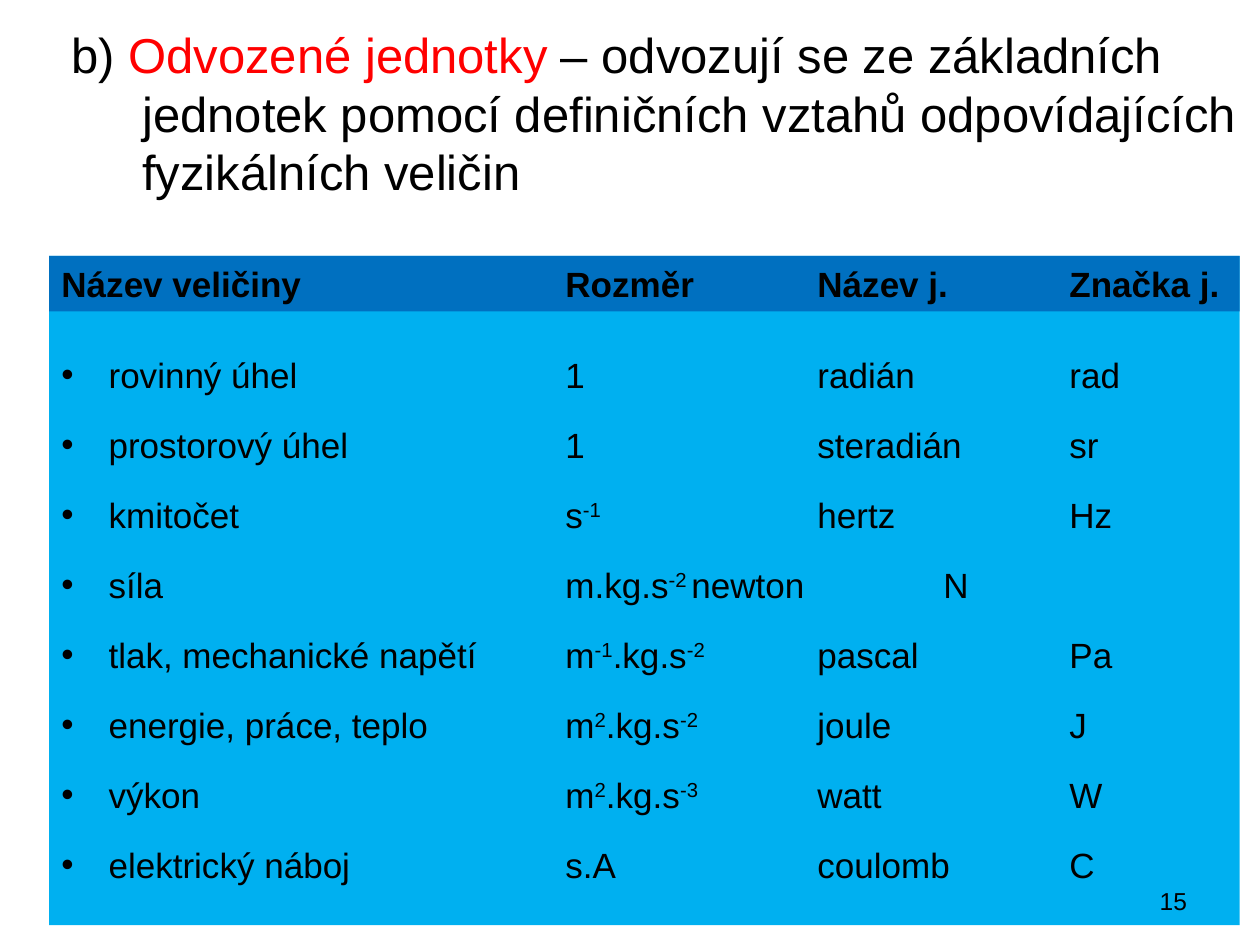
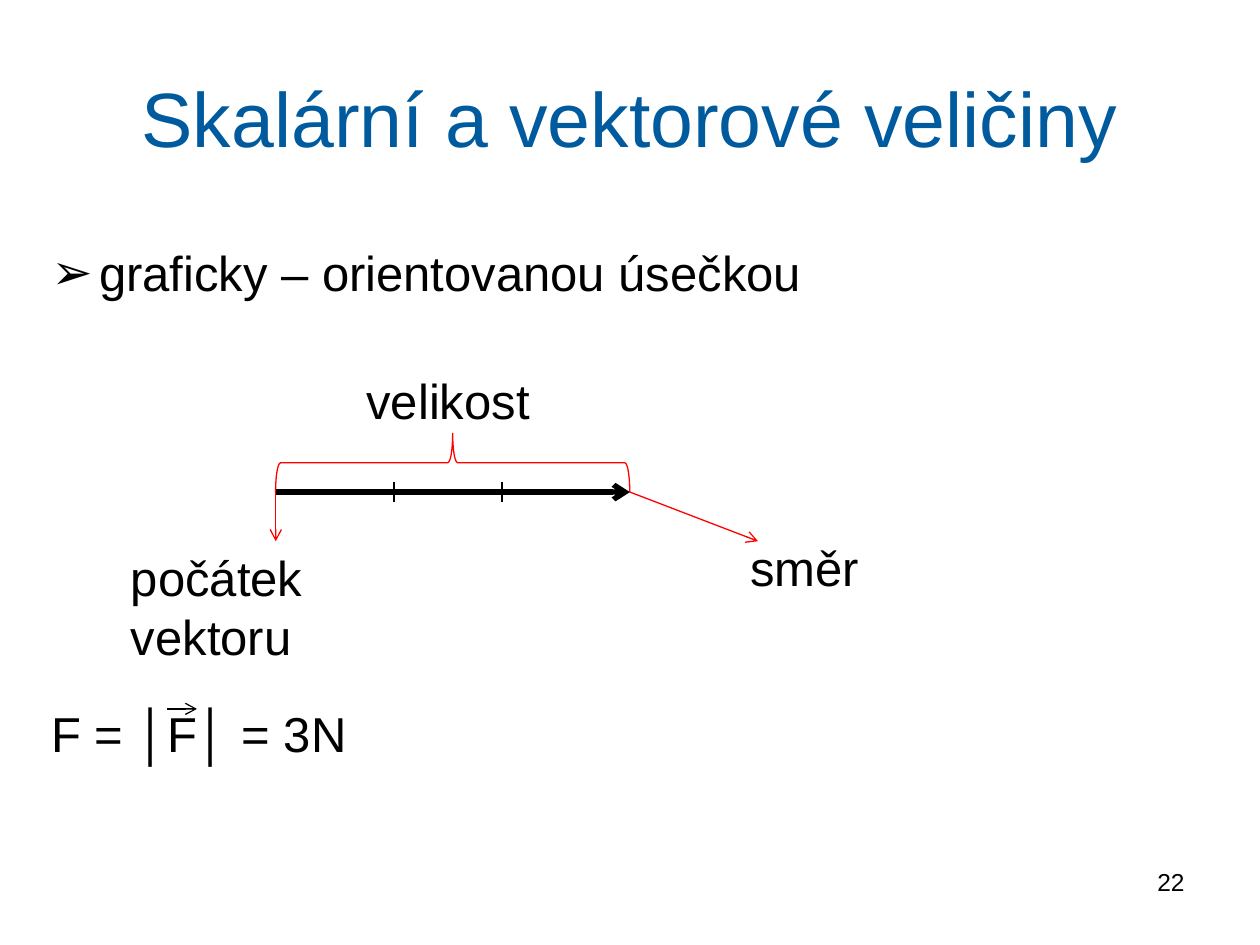
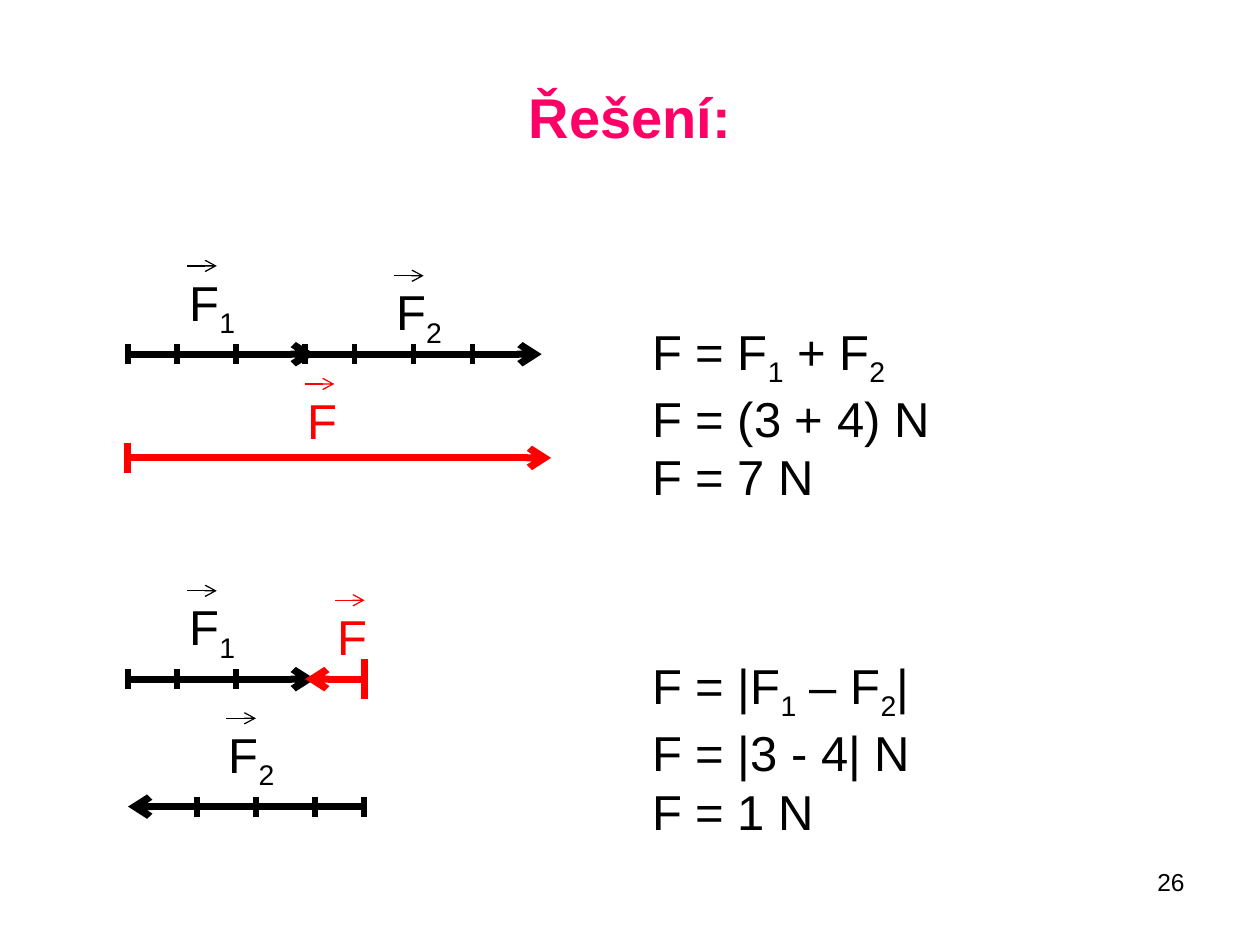
from dataclasses import dataclass

from lxml import etree
from pptx import Presentation
from pptx.dml.color import RGBColor
from pptx.enum.shapes import MSO_CONNECTOR, MSO_SHAPE
from pptx.enum.text import MSO_ANCHOR, PP_ALIGN
from pptx.oxml.ns import qn
from pptx.util import Cm, Pt

LEFT, CENTER, RIGHT = PP_ALIGN.LEFT, PP_ALIGN.CENTER, PP_ALIGN.RIGHT
TOP, MIDDLE = MSO_ANCHOR.TOP, MSO_ANCHOR.MIDDLE
STRAIGHT = MSO_CONNECTOR.STRAIGHT
RECTANGLE, LEFT_BRACE = MSO_SHAPE.RECTANGLE, MSO_SHAPE.LEFT_BRACE


@dataclass(frozen=True)
class Theme:
    font: str = "Arial"
    black: RGBColor = RGBColor(0x00, 0x00, 0x00)
    red: RGBColor = RGBColor(0xFF, 0x00, 0x00)
    pink: RGBColor = RGBColor(0xFF, 0x00, 0x66)
    title_blue: RGBColor = RGBColor(0x00, 0x5A, 0x9E)
    header_blue: RGBColor = RGBColor(0x00, 0x70, 0xC0)
    body_blue: RGBColor = RGBColor(0x00, 0xB0, 0xF0)
    title: int = 44
    subtitle: int = 32
    body: int = 28
    table: int = 20
    footer: int = 14
    thin: float = 0.75
    medium: float = 3
    thick: float = 4


theme = Theme()
BASELINES = {"^": "30000", "~": "-25000"}


def write(frame, text, size=theme.body, color=theme.black, bold=False,
          align=LEFT, anchor=TOP, bullet=None, indent=0, tab_size=2.54,
          line_spacing=1.0, space_before=0):
    """Fill a text frame; ¦^…¦ is superscript, ¦~…¦ subscript, ¦*…¦ red."""
    frame.word_wrap = True
    frame.vertical_anchor = anchor
    for number, line in enumerate(text.split("\n")):
        paragraph = frame.add_paragraph() if number else frame.paragraphs[0]
        paragraph.alignment = align
        properties = paragraph._p.get_or_add_pPr()
        properties.set("defTabSz", str(Cm(tab_size)))
        if indent:
            properties.set("marL", str(Cm(indent)))
            properties.set("indent", str(-Cm(indent)))
        if bullet:
            etree.SubElement(properties, qn("a:buFont")).set("typeface", theme.font)
            etree.SubElement(properties, qn("a:buChar")).set("char", bullet)
        paragraph.line_spacing = line_spacing
        paragraph.space_before = Pt(space_before if number else 0)
        for index, piece in enumerate(line.split("¦")):
            mark = ""
            if index % 2:
                mark, piece = piece[0], piece[1:]
            if not piece:
                continue
            run = paragraph.add_run()
            run.text = piece
            run.font.name = theme.font
            run.font.size = Pt(size)
            run.font.bold = bold
            run.font.color.rgb = theme.red if mark == "*" else color
            if mark in BASELINES:
                run._r.get_or_add_rPr().set("baseline", BASELINES[mark])


def draw_line(slide, start, end, color=theme.black, width=theme.thin, arrow=False):
    connector = slide.shapes.add_connector(
        STRAIGHT, *(Cm(value) for value in (*start, *end)))
    connector.line.color.rgb = color
    connector.line.width = Pt(width)
    if arrow:
        outline = connector.line._get_or_add_ln()
        etree.SubElement(outline, qn("a:tailEnd")).set("type", "arrow")
    etree.SubElement(connector._element.spPr, qn("a:effectLst"))


presentation = Presentation()
presentation.slide_width = Cm(25.4)
presentation.slide_height = Cm(19.05)
blank = presentation.slide_layouts[6]
units_slide, vector_slide, solution_slide = [
    presentation.slides.add_slide(blank) for _ in range(3)]

# List of derived units in tabbed columns under a header band
header = "Název veličiny\t\t\tRozměr\tNázev j.\tZnačka j."
quantities = [
    "rovinný úhel\t\t\t1\t\tradián\t\trad",
    "prostorový úhel\t\t1\t\tsteradián\tsr",
    "kmitočet\t\t\ts¦^-1¦\t\thertz\t\tHz",
    "síla\t\t\t\tm.kg.s¦^-2¦\tnewton\t\tN",
    "tlak, mechanické napětí\tm¦^-1¦.kg.s¦^-2¦\tpascal\t\tPa",
    "energie, práce, teplo\t\tm¦^2¦.kg.s¦^-2¦\tjoule\t\tJ",
    "výkon\t\t\tm¦^2¦.kg.s¦^-3¦\twatt\t\tW",
    "elektrický náboj\t\ts.A\t\tcoulomb\tC",
]
bands = [
    (13.49, theme.body_blue, 1.54, "\n".join(quantities),
     {"bullet": "•", "indent": 0.95, "line_spacing": 1.5, "space_before": 4}),
    (1.12, theme.header_blue, 0.13, header, {"bold": True}),
]
for height, fill, margin_top, text, style in bands:
    band = units_slide.shapes.add_shape(
        RECTANGLE, Cm(0.99), Cm(5.16), Cm(24), Cm(height))
    band.shadow.inherit = False
    band.fill.solid()
    band.fill.fore_color.rgb = fill
    band.line.fill.background()
    band.text_frame.margin_top = Cm(margin_top)
    write(band.text_frame, text, size=theme.table, **style)

# Titles and page numbers
titles = [
    (units_slide, (1.19, 0, 24.21, 4.54),
     "b) ¦*Odvozené jednotky ¦– odvozují se ze základních jednotek pomocí "
     "definičních vztahů odpovídajících fyzikálních veličin",
     {"indent": 1.43}),
    (vector_slide, (1.27, 0.76, 22.86, 3.18), "Skalární a vektorové veličiny",
     {"size": theme.title, "color": theme.title_blue, "align": CENTER}),
    (solution_slide, (1.27, 0.76, 22.86, 3.18), "Řešení:",
     {"size": theme.subtitle, "color": theme.pink, "bold": True, "align": CENTER}),
]
for slide, box, text, style in titles:
    title = slide.shapes.add_textbox(*(Cm(value) for value in box))
    write(title.text_frame, text, anchor=MIDDLE, **style)

page_numbers = [(units_slide, 18.26, 17.73, "15"),
                (vector_slide, 18.21, 17.35, "22"),
                (solution_slide, 18.21, 17.35, "26")]
for slide, left, top, number in page_numbers:
    footer = slide.shapes.add_textbox(Cm(left), Cm(top), Cm(5.92), Cm(1.32))
    write(footer.text_frame, number, size=theme.footer, align=RIGHT)

# Directed segment with its magnitude, origin and direction
origin, tip = (5.56, 9.92), (12.7, 9.92)
draw_line(vector_slide, origin, tip, width=theme.medium, arrow=True)
for tick in (7.94, 10.12):
    draw_line(vector_slide, (tick, 9.72), (tick, 10.12))
draw_line(vector_slide, origin, (5.56, 10.91), theme.red, arrow=True)
draw_line(vector_slide, tip, (15.28, 10.91), theme.red, arrow=True)
draw_line(vector_slide, (3.37, 14.29), (3.97, 14.29), arrow=True)

brace = vector_slide.shapes.add_shape(
    LEFT_BRACE, Cm(8.53), Cm(5.76), Cm(1.19), Cm(7.14))
brace.rotation = 90
brace.shadow.inherit = False
brace.fill.background()
brace.line.color.rgb = theme.red
brace.line.width = Pt(theme.thin)

# Body text and labels
texts = [
    (vector_slide, (0.79, 4.77, 22.86, 1.5), "graficky – orientovanou úsečkou",
     {"bullet": "➢", "indent": 0.96}),
    (vector_slide, (0.79, 14.06, 22.86, 1.5), "F = │F│ = 3N", {}),
    (vector_slide, (14.88, 10.72, 2.97, 1.45), "směr", {}),
    (vector_slide, (2.39, 10.92, 4.37, 2.64), "počátek vektoru", {}),
    (vector_slide, (7.14, 7.34, 3.96, 1.45), "velikost", {}),
    (solution_slide, (12.9, 6.35, 6.76, 3.84),
     "F = F¦~1¦ + F¦~2¦\nF = (3 + 4) N\nF = 7 N", {}),
    (solution_slide, (12.9, 13.09, 6.76, 3.84),
     "F = |F¦~1¦ – F¦~2¦|\nF = |3 - 4| N\nF = 1 N", {}),
]
for slide, box, text, style in texts:
    text_box = slide.shapes.add_textbox(*(Cm(value) for value in box))
    write(text_box.text_frame, text, **style)

# Forces: name, label left and top, start, end, height, ticks, tick half-length
forces = [
    ("F¦~1", 3.57, 5.36, 2.58, 6.35, 7.14, 3, 0.2),
    ("F¦~2", 7.74, 5.56, 6.15, 10.92, 7.14, 4, 0.2),
    ("F", 5.94, 7.74, 2.58, 11.11, 9.23, 1, 0.3),
    ("F¦~2", 4.36, 14.48, 7.34, 2.58, 16.26, 4, 0.2),
    ("F¦~1", 3.57, 11.91, 2.58, 6.35, 13.69, 3, 0.2),
    ("F", 6.55, 12.1, 7.34, 6.15, 13.69, 1, 0.4),
]
first_gap, tick_gap = 0.99, 1.19
for name, left, top, start, end, height, tick_count, half in forces:
    resultant = name == "F"
    color = theme.red if resultant else theme.black
    tick_width = theme.thick if resultant else theme.medium
    direction = 1 if end > start else -1
    draw_line(solution_slide, (start, height), (end, height), color,
              theme.thick, arrow=True)
    ticks = [start] + [start + direction * (first_gap + tick_gap * step)
                       for step in range(tick_count - 1)]
    for tick in ticks:
        draw_line(solution_slide, (tick, height - half), (tick, height + half),
                  color, tick_width)
    label = solution_slide.shapes.add_textbox(Cm(left), Cm(top), Cm(1.7), Cm(1.45))
    write(label.text_frame, name, color=color)
    draw_line(solution_slide, (left + 0.2, top), (left + 0.8, top), color, arrow=True)

presentation.save("out.pptx")
